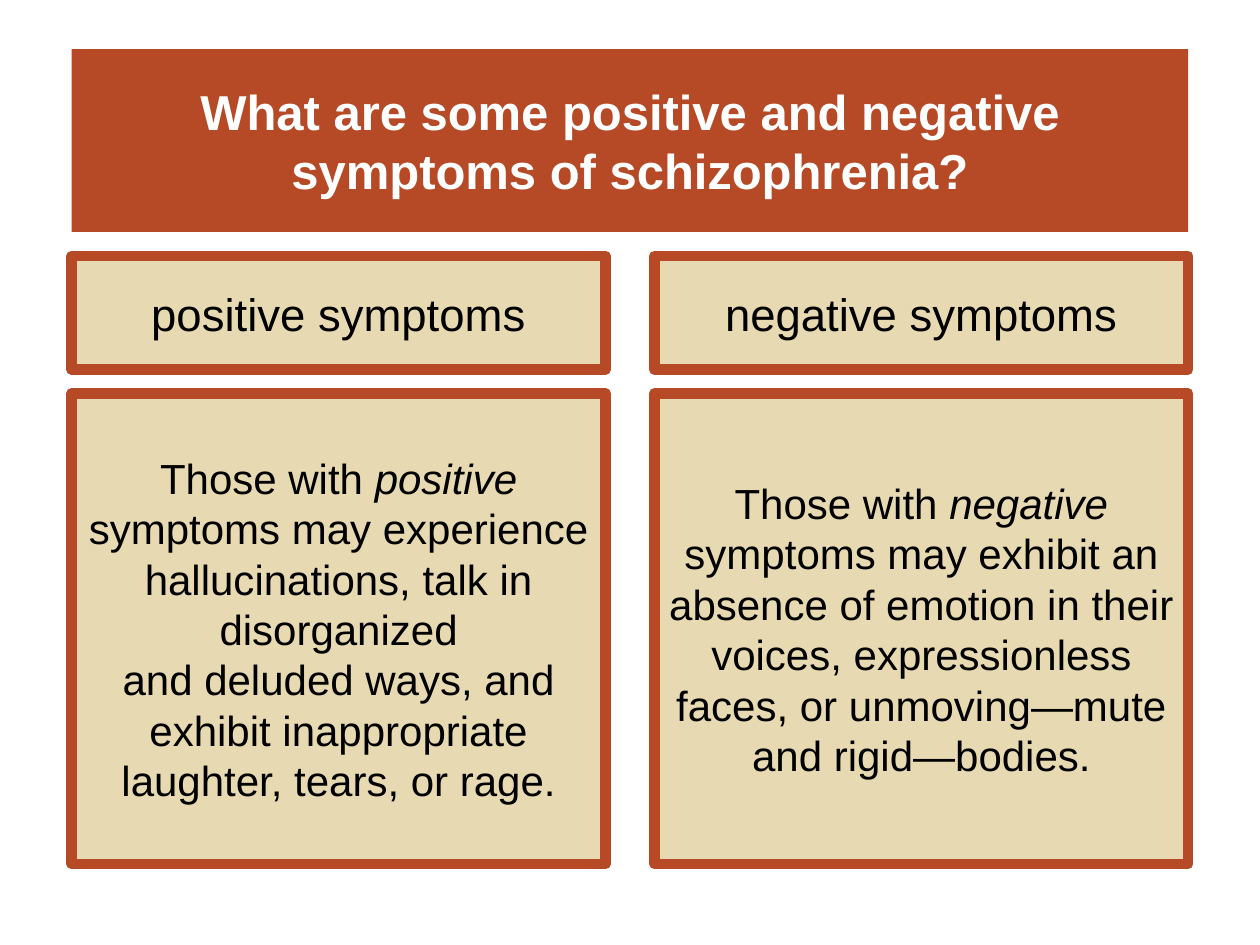
from pptx import Presentation
from pptx.dml.color import RGBColor
from pptx.enum.shapes import MSO_SHAPE
from pptx.enum.text import MSO_ANCHOR, PP_ALIGN
from pptx.util import Pt

# Content: each paragraph is a list of (text, italic) spans
TITLE = [[("What are some positive and negative symptoms of schizophrenia?", False)]]
COLUMNS = [
    {
        "heading": [[("positive symptoms", False)]],
        "body": [
            [("Those with ", False), ("positive ", True),
             ("symptoms may experience hallucinations, talk in disorganized", False)],
            [("and deluded ways, and exhibit inappropriate laughter, tears, or rage.", False)],
        ],
    },
    {
        "heading": [[("negative symptoms", False)]],
        "body": [
            [("Those with ", False), ("negative", True)],
            [("symptoms may exhibit an absence of emotion in their voices, "
              "expressionless faces, or unmoving—mute and rigid—bodies.", False)],
        ],
    },
]

RUST, SAND = RGBColor(0xB6, 0x49, 0x26), RGBColor(0xE7, 0xD9, 0xB1)
BLACK, WHITE = RGBColor(0, 0, 0), RGBColor(255, 255, 255)
THEME = {
    "title": {"fill": RUST, "border": 0,
              "font": {"name": "Arial", "size": Pt(28), "bold": True}, "color": WHITE},
    "heading": {"fill": SAND, "border": 6,
                "font": {"name": "Arial", "size": Pt(26), "bold": False}, "color": BLACK},
    "body": {"fill": SAND, "border": 6,
             "font": {"name": "Arial", "size": Pt(24), "bold": False}, "color": BLACK},
}

# Layout in points
PAGE_WIDTH, PAGE_HEIGHT = 720, 540
MARGIN, GUTTER = 41, 28
ROWS = {"title": (28, 104.5), "heading": (146.25, 65), "body": (224.75, 269)}
CONTENT_WIDTH = PAGE_WIDTH - 2 * MARGIN
COLUMN_WIDTH = (CONTENT_WIDTH - GUTTER) / len(COLUMNS)


def add_panel(page, role, left, width, paragraphs):
    style = THEME[role]
    top, height = ROWS[role]
    box = page.shapes.add_shape(MSO_SHAPE.RECTANGLE, Pt(left), Pt(top), Pt(width), Pt(height))
    box.shadow.inherit = False
    box.fill.solid()
    box.fill.fore_color.rgb = style["fill"]
    if style["border"]:
        box.line.color.rgb = RUST
        box.line.width = Pt(style["border"])
    else:
        box.line.fill.background()

    frame = box.text_frame
    frame.word_wrap = True
    frame.vertical_anchor = MSO_ANCHOR.MIDDLE
    for index, spans in enumerate(paragraphs):
        para = frame.add_paragraph() if index else frame.paragraphs[0]
        para.alignment = PP_ALIGN.CENTER
        for text, italic in spans:
            span = para.add_run()
            span.text = text
            for name, value in style["font"].items():
                setattr(span.font, name, value)
            span.font.italic = italic
            span.font.color.rgb = style["color"]


deck = Presentation()
deck.slide_width, deck.slide_height = Pt(PAGE_WIDTH), Pt(PAGE_HEIGHT)
page = deck.slides.add_slide(deck.slide_layouts[6])

# Title banner
add_panel(page, "title", MARGIN, CONTENT_WIDTH, TITLE)

# Symptom columns: heading above body
for number, column in enumerate(COLUMNS):
    left = MARGIN + number * (COLUMN_WIDTH + GUTTER)
    for role, paragraphs in column.items():
        add_panel(page, role, left, COLUMN_WIDTH, paragraphs)

deck.save("out.pptx")
